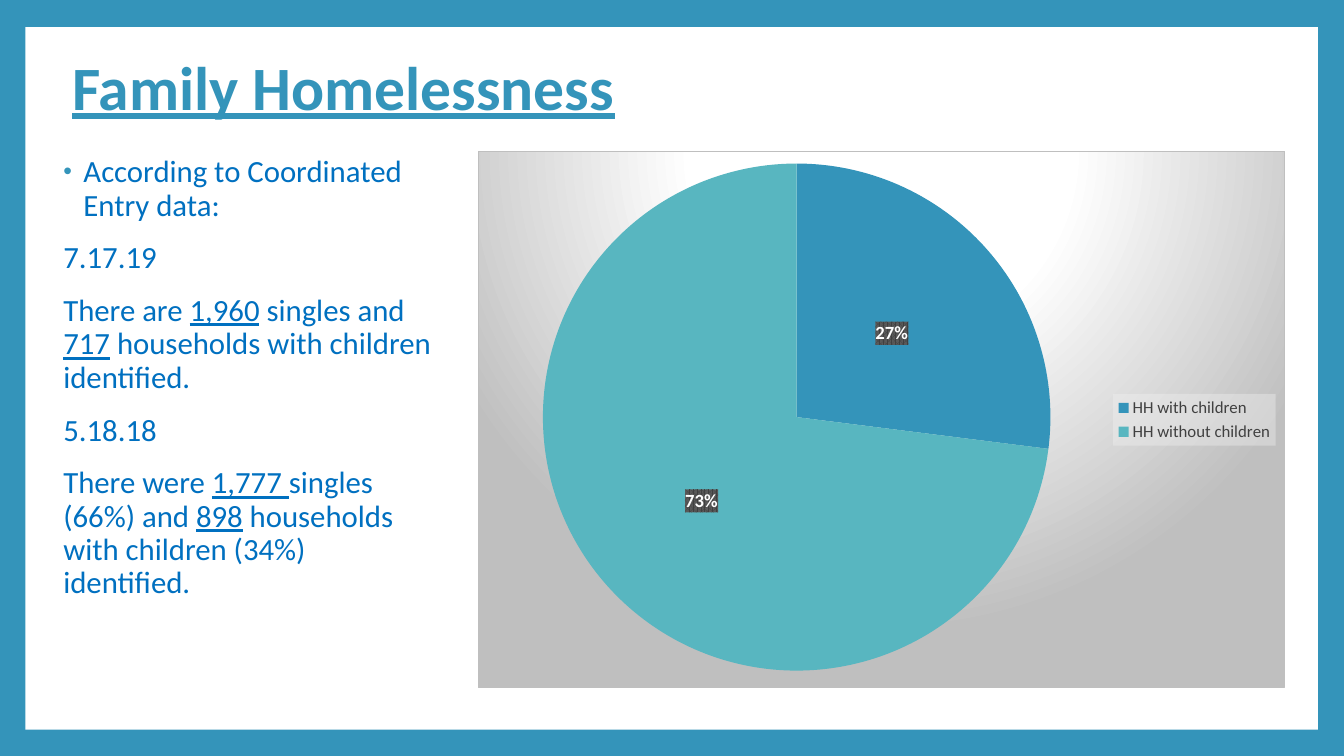
from lxml import etree
from pptx import Presentation
from pptx.chart.data import CategoryChartData
from pptx.dml.color import RGBColor
from pptx.enum.chart import XL_CHART_TYPE, XL_LABEL_POSITION, XL_LEGEND_POSITION
from pptx.enum.shapes import MSO_SHAPE
from pptx.enum.text import MSO_ANCHOR
from pptx.oxml import parse_xml
from pptx.oxml.ns import nsdecls, qn
from pptx.util import Inches, Pt

COLORS = {
    "frame": "3494BA", "panel": "FFFFFF", "text": "0070C0", "teal": "58B6C0",
    "edge": "BFBFBF", "legend": "404040", "legend_back": "F2F2F2",
    "label_dark": "404040", "label_light": "595959", "black": "000000",
}
FONT = "Calibri"


def color(name):
    return RGBColor.from_string(COLORS[name])


def solid(name, alpha=100):
    return (f'<a:solidFill><a:srgbClr val="{COLORS[name]}">'
            f'<a:alpha val="{alpha * 1000}"/></a:srgbClr></a:solidFill>')


def paint(element, fill):
    """Give a chart part a fill, placed just before its text properties."""
    sp_pr = parse_xml(f'<c:spPr {nsdecls("c", "a")}>{fill}</c:spPr>')
    element.find(qn("c:txPr")).addprevious(sp_pr)


class SlideBuilder:
    """Places elements by percent of the slide's width and height."""

    def __init__(self, prs):
        self.prs = prs
        self.slide = prs.slides.add_slide(prs.slide_layouts[6])
        self.shapes = self.slide.shapes

    def place(self, x, y, w, h):
        width, height = self.prs.slide_width / 100, self.prs.slide_height / 100
        return int(x * width), int(y * height), int(w * width), int(h * height)

    def background(self, name):
        fill = self.slide.background.fill
        fill.solid()
        fill.fore_color.rgb = color(name)

    def panel(self, area, name):
        sp = self.shapes.add_shape(MSO_SHAPE.RECTANGLE, *self.place(*area))
        sp.shadow.inherit = False
        sp.fill.solid()
        sp.fill.fore_color.rgb = color(name)
        sp.line.fill.background()

    def text(self, area, paragraphs, size, name, bold=False,
             anchor=MSO_ANCHOR.TOP, indent=0, bullet_first=False):
        """Each paragraph is a list of (text, underlined) runs."""
        tf = self.shapes.add_textbox(*self.place(*area)).text_frame
        tf.word_wrap = True
        tf.vertical_anchor = anchor
        for i, runs in enumerate(paragraphs):
            p = tf.paragraphs[0] if i == 0 else tf.add_paragraph()
            p.line_spacing = 0.9
            if i:
                p.space_before = Pt(14)
            p_pr = p._p.get_or_add_pPr()
            p_pr.set("marL", str(Inches(indent)))
            if bullet_first and i == 0:
                self.bullet(p_pr)
            for words, underlined in runs:
                r = p.add_run()
                r.text = words
                r.font.name, r.font.size, r.font.bold = FONT, Pt(size), bold
                r.font.underline = underlined
                r.font.color.rgb = color(name)

    def bullet(self, p_pr):
        p_pr.set("marL", str(Inches(0.25)))
        p_pr.set("indent", str(Inches(-0.2)))
        clr = etree.SubElement(p_pr, qn("a:buClr"))
        etree.SubElement(clr, qn("a:srgbClr"), val=COLORS["frame"])
        etree.SubElement(p_pr, qn("a:buSzPct"), val="80000")
        etree.SubElement(p_pr, qn("a:buFont"), typeface="Arial")
        etree.SubElement(p_pr, qn("a:buChar"), char="•")

    def font(self, font, size, name, bold=False):
        font.name, font.size, font.bold = FONT, Pt(size), bold
        font.color.rgb = color(name)

    def pie(self, area, values, slice_colors, plot_area):
        data = CategoryChartData()
        data.categories = list(values)
        data.add_series("Series 1", list(values.values()))
        chart = self.shapes.add_chart(
            XL_CHART_TYPE.PIE, *self.place(*area), data).chart
        chart.has_title = False
        self.font(chart.font, 10, "black")

        # Slices
        plot = chart.plots[0]
        plot.vary_by_categories = True
        series = plot.series[0]
        for i, name in enumerate(slice_colors):
            fmt = series.points[i].format
            fmt.fill.solid()
            fmt.fill.fore_color.rgb = color(name)
            fmt.line.fill.background()

        # Percent labels
        labels = series.data_labels
        labels.show_value, labels.show_percentage = False, True
        labels.position = XL_LABEL_POSITION.CENTER
        self.font(labels.font, 13.3, "panel", bold=True)
        paint(labels._element,
              '<a:pattFill prst="pct75">'
              f'<a:fgClr><a:srgbClr val="{COLORS["label_dark"]}"/></a:fgClr>'
              f'<a:bgClr><a:srgbClr val="{COLORS["label_light"]}"/></a:bgClr>'
              '</a:pattFill>')

        # Legend
        chart.has_legend = True
        legend = chart.legend
        legend.position = XL_LEGEND_POSITION.RIGHT
        legend.include_in_layout = False
        self.font(legend.font, 12, "legend")
        paint(legend._element, solid("legend_back", 39))

        # Chart area: radial gradient and thin border
        stops = "".join(
            f'<a:gs pos="{pos * 1000}"><a:srgbClr val="{COLORS[name]}"/></a:gs>'
            for pos, name in ((0, "panel"), (39, "panel"), (100, "edge")))
        paint(chart._chartSpace,
              f'<a:gradFill><a:gsLst>{stops}</a:gsLst><a:path path="circle">'
              '<a:fillToRect l="50000" t="-80000" r="50000" b="180000"/>'
              f'</a:path></a:gradFill><a:ln w="{Pt(0.75)}">{solid("edge")}</a:ln>')

        # Plot position as shares of the chart
        sizes = "".join(f'<c:{k} val="{v}"/>' for k, v in zip("xywh", plot_area))
        layout = parse_xml(
            f'<c:layout {nsdecls("c")}><c:manualLayout>'
            '<c:layoutTarget val="inner"/><c:xMode val="edge"/>'
            f'<c:yMode val="edge"/>{sizes}</c:manualLayout></c:layout>')
        area_el = chart._chartSpace.find(".//" + qn("c:plotArea"))
        for old in area_el.findall(qn("c:layout")):
            area_el.remove(old)
        area_el.insert(0, layout)


def main():
    prs = Presentation()
    prs.slide_width, prs.slide_height = Inches(13.33), Inches(7.5)
    s = SlideBuilder(prs)

    # Frame
    s.background("frame")
    s.panel((1.88, 3.6, 96.17, 92.93), "panel")

    # Title
    s.text((4.65, 8.27, 71.87, 7.33), [[("Family Homelessness", True)]],
           44, "frame", bold=True, anchor=MSO_ANCHOR.MIDDLE)

    # Findings
    s.text((3.6, 20, 29.41, 73.2), [
        [("According to Coordinated Entry data:", False)],
        [("7.17.19", False)],
        [("There are ", False), ("1,960", True), (" singles and ", False),
         ("717", True), (" households with children identified.", False)],
        [("5.18.18", False)],
        [("There were ", False), ("1,777 ", True),
         ("singles (66%) and ", False), ("898", True),
         (" households with children (34%) identified.", False)],
    ], 22, "text", indent=0.05, bullet_first=True)

    # Household split
    s.pie((35.56, 20, 60.02, 71.07),
          {"HH with children": 27, "HH without children": 73},
          ("frame", "teal"), (0.08, 0.02, 0.63, 0.95))

    prs.save("out.pptx")


if __name__ == "__main__":
    main()
